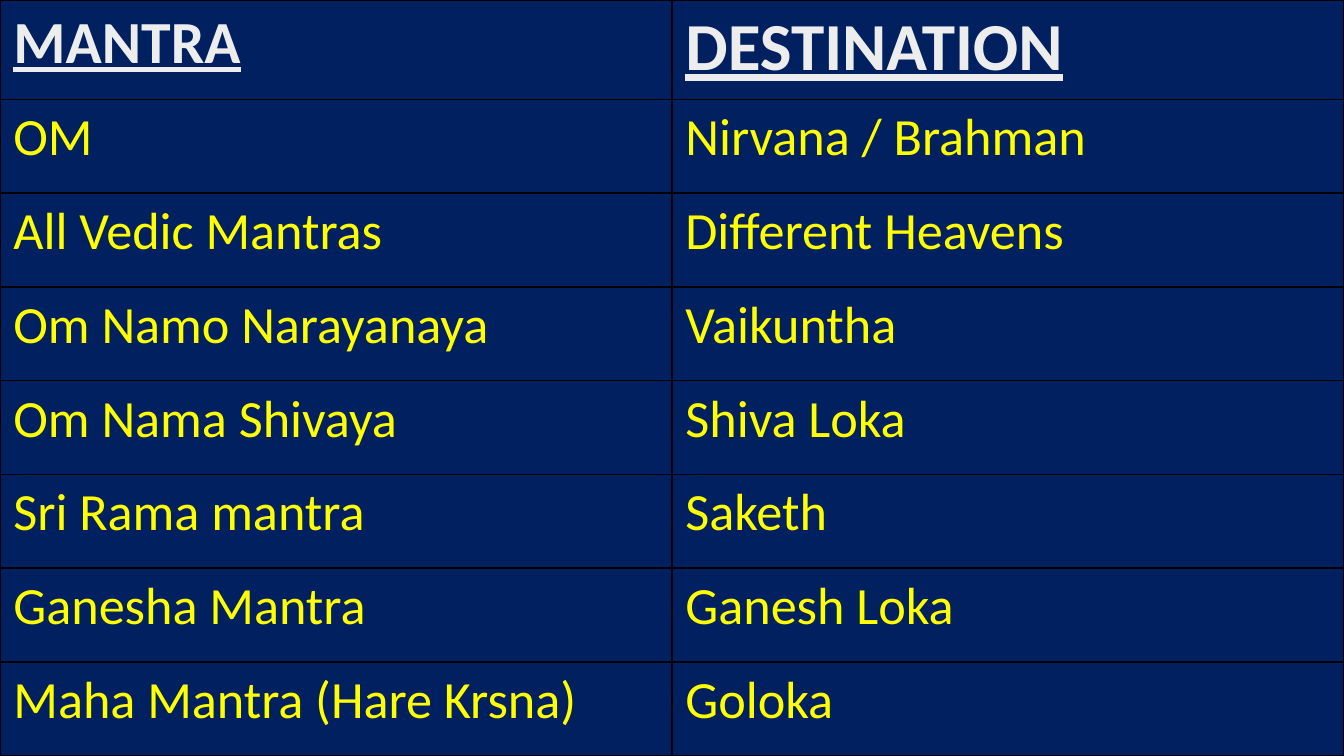
from lxml.etree import SubElement
from pptx import Presentation
from pptx.dml.color import RGBColor
from pptx.oxml.ns import qn
from pptx.util import Cm, Pt

WIDTH, HEIGHT, HEADER_HEIGHT = 25.4, 14.29, 1.88
NAVY, BLACK, PALE, YELLOW = "002060", "000000", "EDEDED", "FFFF00"
HEADINGS = [("MANTRA", 32), ("DESTINATION", 36)]
DESTINATIONS = [
    ("OM", "Nirvana / Brahman"),
    ("All Vedic Mantras", "Different Heavens"),
    ("Om Namo Narayanaya", "Vaikuntha"),
    ("Om Nama Shivaya", "Shiva Loka"),
    ("Sri Rama mantra", "Saketh"),
    ("Ganesha Mantra", "Ganesh Loka"),
    ("Maha Mantra (Hare Krsna)", "Goloka"),
]


def color(value):
    """Turn a hex string into a colour."""
    return RGBColor.from_string(value)


def write(cell, text, size=28, ink=YELLOW, bold=False, underline=False):
    """Put formatted text into a cell."""
    span = cell.text_frame.paragraphs[0].add_run()
    span.text = text
    span.font.name = "Calibri"
    span.font.size = Pt(size)
    span.font.color.rgb = color(ink)
    span.font.bold = bold
    span.font.underline = underline


def style_cell(cell, line=BLACK, weight=1):
    """Draw the four borders of a cell and leave its fill clear."""
    properties = cell._tc.get_or_add_tcPr()
    for side in ("a:lnL", "a:lnR", "a:lnT", "a:lnB"):
        border = SubElement(properties, qn(side), w=str(Pt(weight)))
        fill = SubElement(border, qn("a:solidFill"))
        SubElement(fill, qn("a:srgbClr"), val=line)
    cell.fill.background()


def add_grid(page, row_count, column_count):
    """Add a plain table that covers the whole page."""
    frame = page.shapes.add_table(
        row_count, column_count, Cm(0), Cm(0), Cm(WIDTH), Cm(HEIGHT)
    )
    table = frame.table
    table.horz_banding = False
    table.first_row = False
    for column in table.columns:
        column.width = Cm(WIDTH / column_count)
    for row in table.rows:
        row.height = Cm((HEIGHT - HEADER_HEIGHT) / (row_count - 1))
    table.rows[0].height = Cm(HEADER_HEIGHT)
    for cell in table.iter_cells():
        style_cell(cell)
    return table


def main():
    """Build the deck and save it."""
    deck = Presentation()
    deck.slide_width, deck.slide_height = Cm(WIDTH), Cm(HEIGHT)
    page = deck.slides.add_slide(deck.slide_layouts[6])
    page.background.fill.solid()
    page.background.fill.fore_color.rgb = color(NAVY)

    table = add_grid(page, len(DESTINATIONS) + 1, len(HEADINGS))
    for column, (heading, size) in enumerate(HEADINGS):
        write(table.cell(0, column), heading, size=size, ink=PALE, bold=True, underline=True)
    for row, texts in enumerate(DESTINATIONS, start=1):
        for column, text in enumerate(texts):
            write(table.cell(row, column), text)

    deck.save("out.pptx")


if __name__ == "__main__":
    main()
